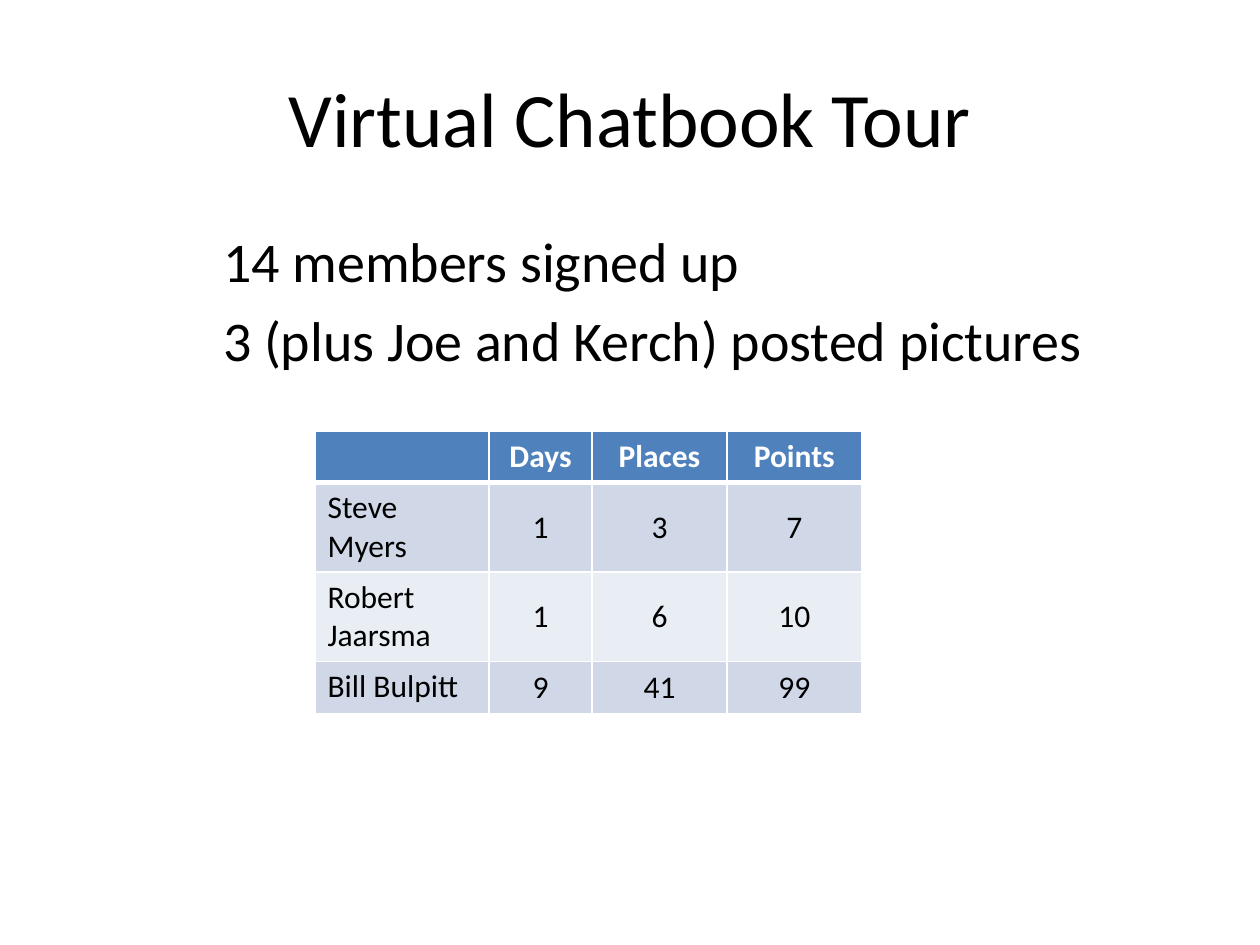
import pptx
import pptx.dml.color
import pptx.enum.text
import pptx.oxml
import pptx.oxml.ns
import pptx.util

Inches = pptx.util.Inches
Pt = pptx.util.Pt
ALIGN = pptx.enum.text.PP_ALIGN
ANCHOR = pptx.enum.text.MSO_ANCHOR

COLORS = {
    "text": "000000",
    "white": "FFFFFF",
    "header": "4F81BD",
    "odd_row": "D0D8E8",
    "even_row": "E9EDF4",
}


class TourSlide:
    font = "Calibri"

    def __init__(self, deck):
        self.slide = deck.slides.add_slide(deck.slide_layouts[1])

    def color(self, name):
        return pptx.dml.color.RGBColor.from_string(COLORS[name])

    def place(self, placeholder, left, top, width, height):
        placeholder.left, placeholder.top = Inches(left), Inches(top)
        placeholder.width, placeholder.height = Inches(width), Inches(height)

    def add_words(self, paragraph, words, size, color="text", bold=False, align=None):
        paragraph.alignment = align
        run = paragraph.add_run()
        run.text = words
        run.font.name = self.font
        run.font.size = Pt(size)
        run.font.bold = bold
        run.font.color.rgb = self.color(color)

    def title(self, words, box):
        heading = self.slide.shapes.title
        self.place(heading, *box)
        heading.text_frame.vertical_anchor = ANCHOR.MIDDLE
        self.add_words(heading.text_frame.paragraphs[0], words, 44, align=ALIGN.CENTER)

    def body(self, lines, box):
        summary = self.slide.placeholders[1]
        self.place(summary, *box)
        frame = summary.text_frame
        for index, line in enumerate(lines):
            paragraph = frame.add_paragraph() if index else frame.paragraphs[0]
            self.add_words(paragraph, line, 32)
            properties = paragraph._p.get_or_add_pPr()
            properties.set("marL", "0")
            properties.set("indent", "0")
            properties.append(pptx.oxml.parse_xml(
                f"<a:buNone {pptx.oxml.ns.nsdecls('a')}/>"))

    def borders(self, cell, widths):
        properties = cell._tc.get_or_add_tcPr()
        for position, (side, width) in enumerate(widths.items()):
            properties.insert(position, pptx.oxml.parse_xml(
                f'<a:ln{side} {pptx.oxml.ns.nsdecls("a")} w="{Pt(width)}">'
                f'<a:solidFill><a:srgbClr val="{COLORS["white"]}"/></a:solidFill>'
                f'</a:ln{side}>'))

    def table(self, rows, left, top, column_widths, row_height):
        scores = self.slide.shapes.add_table(
            len(rows), len(column_widths), Inches(left), Inches(top),
            Inches(sum(column_widths)), Inches(row_height * len(rows))).table
        for column, width in zip(scores.columns, column_widths):
            column.width = Inches(width)
        for r, values in enumerate(rows):
            is_header = r == 0
            fill = "header" if is_header else "odd_row" if r % 2 else "even_row"
            for c, value in enumerate(values):
                cell = scores.cell(r, c)
                cell.fill.solid()
                cell.fill.fore_color.rgb = self.color(fill)
                self.borders(cell, {"L": 1, "R": 1, "T": 3 if r == 1 else 1,
                                    "B": 3 if is_header else 1})
                if not value:
                    continue
                if c:
                    cell.vertical_anchor = ANCHOR.MIDDLE
                self.add_words(cell.text_frame.paragraphs[0], value, 18,
                               "white" if is_header else "text", is_header,
                               ALIGN.CENTER if c else ALIGN.LEFT)


def main():
    deck = pptx.Presentation()
    deck.slide_width, deck.slide_height = Inches(10), Inches(7.5)

    tour = TourSlide(deck)
    tour.title("Virtual Chatbook Tour", (0.5, 0.3, 9, 1.25))
    tour.body(["14 members signed up", "3 (plus Joe and Kerch) posted pictures"],
              (1.67, 1.75, 7.83, 4.95))
    tour.table([
        ("", "Days", "Places", "Points"),
        ("Steve Myers", "1", "3", "7"),
        ("Robert Jaarsma", "1", "6", "10"),
        ("Bill Bulpitt", "9", "41", "99"),
    ], 2.5, 3.42, (1.38, 0.82, 1.07, 1.07), 0.41)

    deck.save("out.pptx")


if __name__ == "__main__":
    main()
